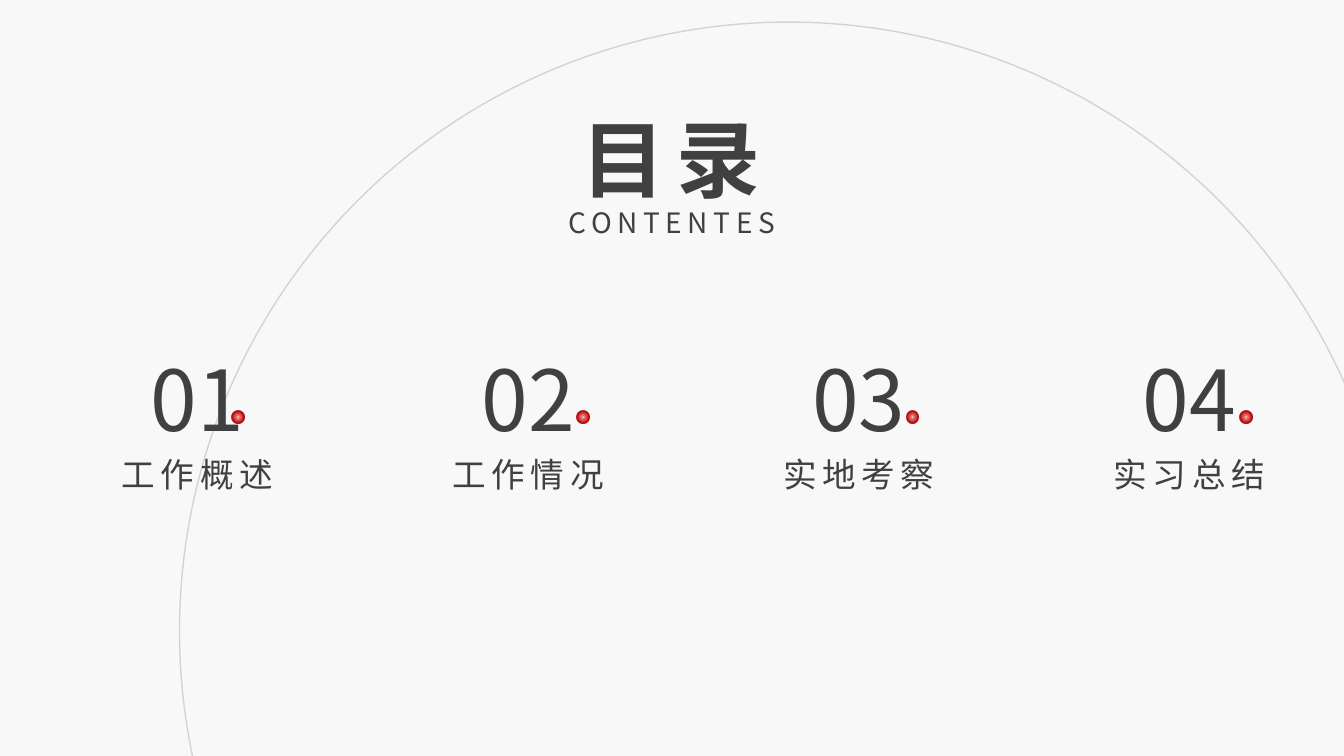
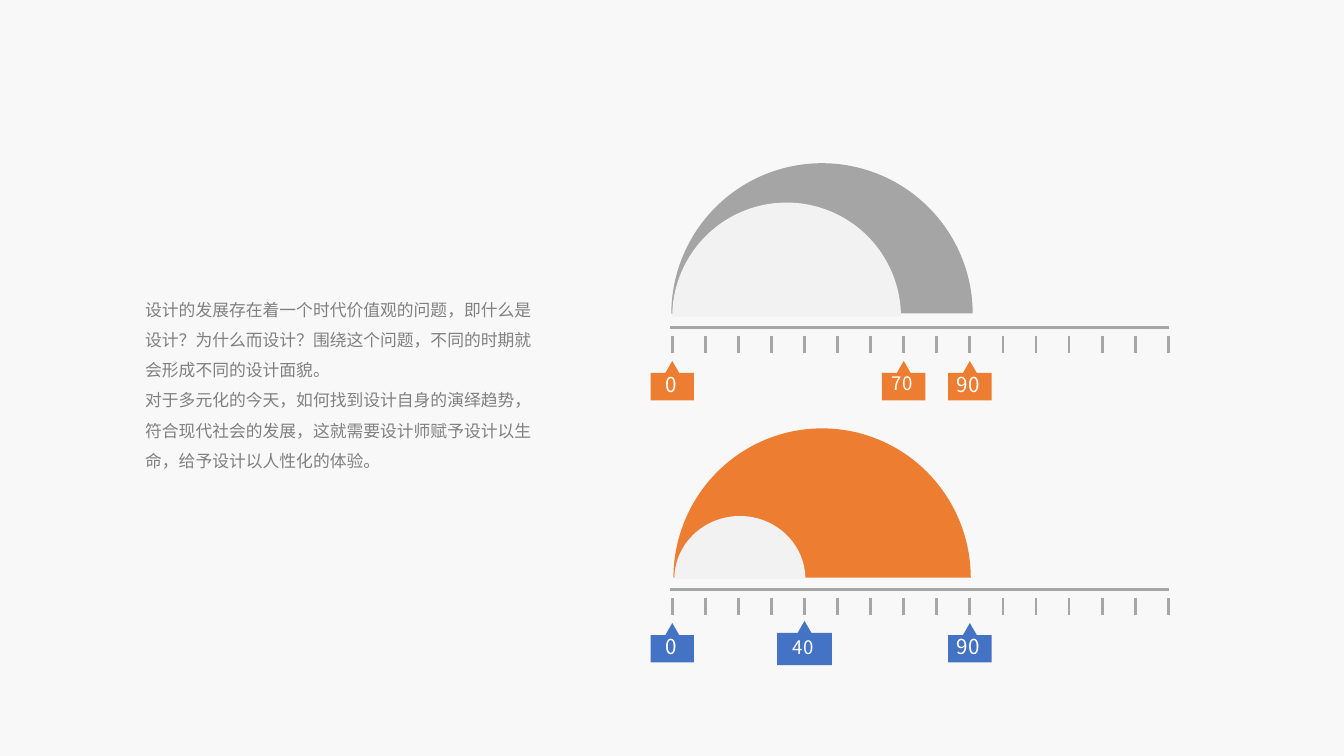
from dataclasses import dataclass

from lxml import etree
from pptx import Presentation
from pptx.dml.color import RGBColor
from pptx.enum.shapes import MSO_CONNECTOR, MSO_SHAPE
from pptx.enum.text import MSO_AUTO_SIZE, PP_ALIGN
from pptx.oxml import parse_xml
from pptx.oxml.ns import qn
from pptx.util import Pt

OVAL, CHORD = MSO_SHAPE.OVAL, MSO_SHAPE.CHORD
RECT, PEAK = MSO_SHAPE.RECTANGLE, MSO_SHAPE.ISOSCELES_TRIANGLE
LEFT, CENTER = PP_ALIGN.LEFT, PP_ALIGN.CENTER
GROW = MSO_AUTO_SIZE.SHAPE_TO_FIT_TEXT
STRAIGHT = MSO_CONNECTOR.STRAIGHT


@dataclass(frozen=True)
class Theme:
    font: str = "Noto Sans CJK SC"
    back: str = "F8F8F8"
    ink: str = "404040"
    soft: str = "808080"
    rule: str = "A6A6A6"
    ring: str = "606060"
    gray: str = "A5A5A5"
    pale: str = "F2F2F2"
    orange: str = "ED7D31"
    blue: str = "4472C4"
    white: str = "FFFFFF"
    red: str = "C00000"
    glow: str = "F6F8FC"
    huge: float = 60
    head: float = 24
    sub: float = 20
    body: float = 12
    label: float = 14.7
    small: float = 13.3


T = Theme()

TITLE, SUBTITLE = "目录", "CONTENTES"
TOPICS = [
    ("01", "工作概述", 165.6),
    ("02", "工作情况", 411.8),
    ("03", "实地考察", 647.3),
    ("04", "实习总结", 885.6),
]
BODY = [
    "设计的发展存在着一个时代价值观的问题，即什么是设计？为什么而设计？围绕这个问题，不同的时期就会形成不同的设计面貌。",
    "对于多元化的今天，如何找到设计自身的演绎趋势，符合现代社会的发展，这就需要设计师赋予设计以生命，给予设计以人性化的体验。",
]
PLAIN = dict(size=T.label, wide=31, high=19.6, lift=0, drop=28.2)
SMALL = {**PLAIN, "size": T.small}
LARGE = dict(size=T.small, wide=39, high=23, lift=1.5, drop=29.2)
GAUGES = [
    dict(axis=234, tint=T.orange,
         domes=[((479.5, 116.6, 215.3, 215.3), T.gray),
                ((480.2, 144.7, 163.4, 163.4), T.pale)],
         marks=[(0, PLAIN), (90, PLAIN), (70, SMALL)]),
    dict(axis=421.2, tint=T.blue,
         domes=[((481, 306, 212.4, 213.8), T.orange),
                ((481.7, 368.6, 93.6, 90), T.pale)],
         marks=[(0, PLAIN), (90, PLAIN), (40, LARGE)]),
]

PITCH, FIRST = 236.2, 141
ZERO, TICK, TICKS = 480.2, 23.62, 16


def rgb(tint):
    return RGBColor.from_string(tint)


def add_text(shapes, lines, box, size=T.body, tint=T.ink, bold=False,
             align=CENTER, track=0, space=None, inset=(7.2, 3.6), wrap=True):
    frame = shapes.add_textbox(*map(Pt, box)).text_frame
    frame.word_wrap, frame.auto_size = wrap, GROW
    frame.margin_left = frame.margin_right = Pt(inset[0])
    frame.margin_top = frame.margin_bottom = Pt(inset[1])
    for n, line in enumerate(lines):
        para = frame.add_paragraph() if n else frame.paragraphs[0]
        para.alignment = align
        if space:
            para.line_spacing = space
        run = para.add_run()
        run.text = line
        font = run.font
        font.name, font.size, font.bold = T.font, Pt(size), bold
        font.color.rgb = rgb(tint)
        props = run._r.get_or_add_rPr()
        etree.SubElement(props, qn("a:ea")).set("typeface", T.font)
        if track:
            props.set("spc", str(track * 100))


def add_form(shapes, kind, box, fill=None):
    form = shapes.add_shape(kind, *map(Pt, box))
    form.shadow.inherit = False
    form.line.fill.background()
    if fill:
        form.fill.solid()
        form.fill.fore_color.rgb = rgb(fill)
    else:
        form.fill.background()
    return form


def add_rule(shapes, start, end):
    rule = shapes.add_connector(STRAIGHT, *map(Pt, start + end))
    rule.line.color.rgb = rgb(T.rule)
    rule.line.width = Pt(2)
    etree.SubElement(rule._element.spPr, qn("a:effectLst"))


def add_ring(shapes):
    ring = add_form(shapes, OVAL, (128.2, 15.8, 869.8, 869.8))
    ring.line.color.rgb = rgb(T.ring)
    ring.line.width = Pt(1)
    tint = ring._element.spPr.find(".//" + qn("a:srgbClr"))
    etree.SubElement(tint, qn("a:alpha")).set("val", "23000")


def add_dot(shapes, left):
    dot = add_form(shapes, OVAL, (left, 293.6, 9, 9))
    stops = ""
    for pos, tint, alpha in [(0, T.glow, 100), (23, T.red, 55),
                             (63, T.red, 100), (100, T.red, 100)]:
        stops += (f'<a:gs pos="{pos * 1000}"><a:srgbClr val="{tint}">'
                  f'<a:alpha val="{alpha * 1000}"/></a:srgbClr></a:gs>')
    props = dot._element.spPr
    props.replace(props.find(qn("a:noFill")), parse_xml(
        '<a:gradFill xmlns:a="http://schemas.openxmlformats.org/drawingml/2006/main">'
        f'<a:gsLst>{stops}</a:gsLst><a:path path="circle">'
        '<a:fillToRect l="50000" t="50000" r="50000" b="50000"/>'
        '</a:path></a:gradFill>'))


def add_mark(shapes, value, look, axis, tint):
    mid = ZERO + value / 10 * TICK
    top = axis - look["lift"]
    wide = look["wide"]
    group = shapes.add_group_shape().shapes
    add_form(group, RECT, (mid - wide / 2, top + 32.4, wide, look["high"]), tint)
    add_form(group, PEAK, (mid - 7.5, top + 23.8, 15, 13), tint)
    add_text(group, [str(value)], (mid - 20.5, axis + look["drop"], 39, 25),
             size=look["size"], tint=T.white, wrap=False)


def add_gauge(shapes, axis, tint, domes, marks):
    group = shapes.add_group_shape().shapes
    for box, fill in domes:
        dome = add_form(group, CHORD, box, fill)
        dome.adjustments[0], dome.adjustments[1] = 108.08, 215.89
    add_rule(shapes, (478.8, axis), (835.2, axis))
    for n in range(TICKS):
        left = ZERO + n * TICK
        add_rule(shapes, (left, axis + 5.8), (left, axis + 18))
    for value, look in marks:
        add_mark(shapes, value, look, axis, tint)


def new_slide(deck):
    slide = deck.slides.add_slide(deck.slide_layouts[6])
    fill = slide.background.fill
    fill.solid()
    fill.fore_color.rgb = rgb(T.back)
    return slide.shapes


def build_contents(deck):
    shapes = new_slide(deck)
    add_ring(shapes)
    add_text(shapes, [SUBTITLE], (336.2, 143.3, 287.3, 31.7), size=T.sub, track=4)
    add_text(shapes, [TITLE], (367.9, 73.4, 223.2, 80), size=T.huge, bold=True, track=8)
    for n, (number, topic, dot) in enumerate(TOPICS):
        mid = FIRST + n * PITCH
        add_text(shapes, [number], (mid - 71, 244.5, 142, 80), size=T.huge)
        add_text(shapes, [topic], (mid - 110, 320.4, 220, 36), size=T.head, track=4)
        add_dot(shapes, dot)


def build_gauges(deck):
    shapes = new_slide(deck)
    for gauge in GAUGES:
        add_gauge(shapes, **gauge)
    add_text(shapes, BODY, (94.3, 201.6, 301.7, 140.4), tint=T.soft,
             align=LEFT, space=1.5, inset=(9.4, 5))


def main():
    deck = Presentation()
    deck.slide_width, deck.slide_height = Pt(960), Pt(540)
    build_contents(deck)
    build_gauges(deck)
    deck.save("out.pptx")


if __name__ == "__main__":
    main()
